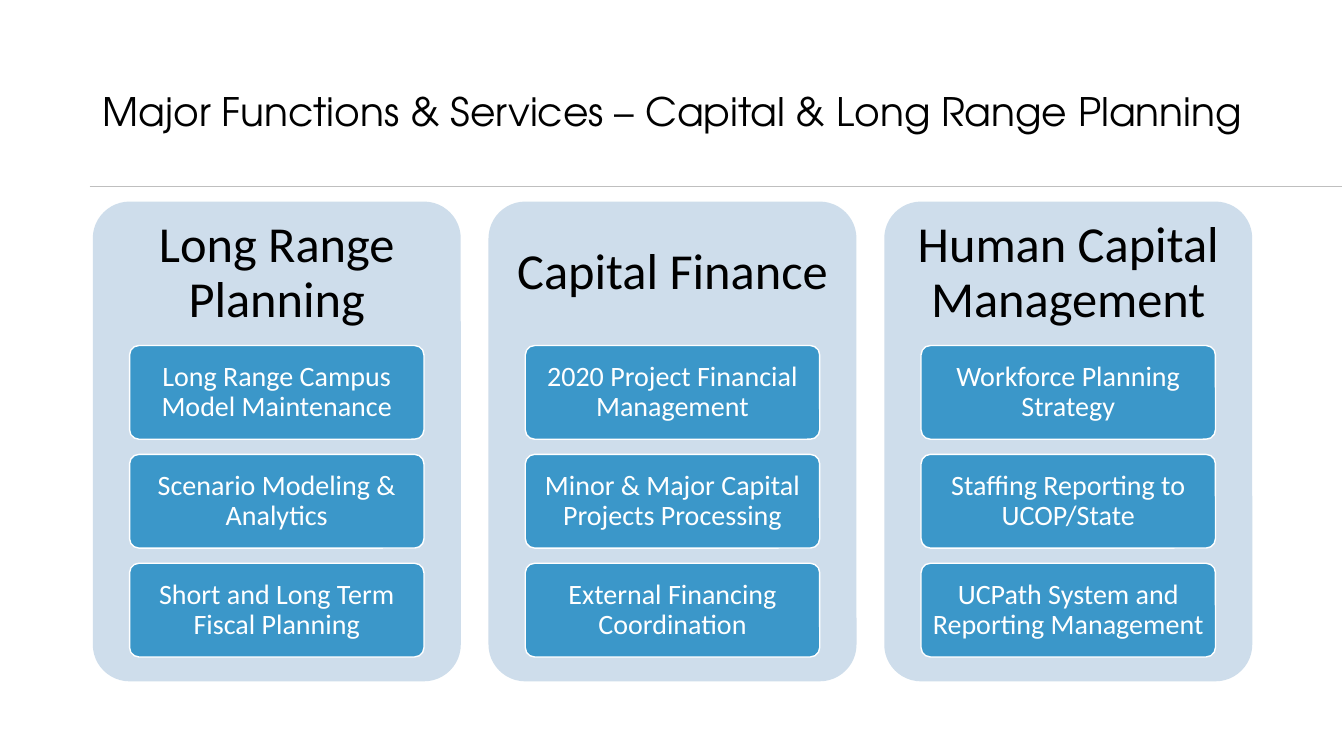
from lxml.etree import SubElement
from pptx import Presentation
from pptx.dml.color import RGBColor
from pptx.enum.shapes import MSO_CONNECTOR, MSO_SHAPE
from pptx.enum.text import MSO_ANCHOR, MSO_AUTO_SIZE, PP_ALIGN
from pptx.oxml.ns import qn
from pptx.util import Inches, Pt

COLORS = {
    "ink": "000000",
    "white": "FFFFFF",
    "rule": "BFBFBF",
    "panel": "CEDDEB",
    "tile": "3B97C9",
}

FUNCTIONS = [
    ("Long Range Planning", [
        "Long Range Campus Model Maintenance",
        "Scenario Modeling & Analytics",
        "Short and Long Term Fiscal Planning",
    ]),
    ("Capital Finance", [
        "2020 Project Financial Management",
        "Minor & Major Capital Projects Processing",
        "External Financing Coordination",
    ]),
    ("Human Capital Management", [
        "Workforce Planning Strategy",
        "Staffing Reporting to UCOP/State",
        "UCPath System and Reporting Management",
    ]),
]


def color(name):
    return RGBColor.from_string(COLORS[name])


def write(frame, text, size, font, ink, align, insets=(0.1, 0.05)):
    """Fill a text frame with one vertically centred paragraph."""
    frame.word_wrap = True
    frame.auto_size = MSO_AUTO_SIZE.NONE
    frame.vertical_anchor = MSO_ANCHOR.MIDDLE
    frame.margin_left = frame.margin_right = Inches(insets[0])
    frame.margin_top = frame.margin_bottom = Inches(insets[1])
    paragraph = frame.paragraphs[0]
    paragraph.alignment = align
    paragraph.line_spacing = 0.9
    paragraph.space_before = Pt(0)
    run = paragraph.add_run()
    run.text = text
    run.font.size = Pt(size)
    run.font.name = font
    run.font.color.rgb = color(ink)


def add_card(slide, left, top, width, height, fill):
    card = slide.shapes.add_shape(
        MSO_SHAPE.ROUNDED_RECTANGLE,
        Inches(left), Inches(top), Inches(width), Inches(height))
    card.adjustments[0] = 0.1
    card.shadow.inherit = False
    card.fill.solid()
    card.fill.fore_color.rgb = color(fill)
    card.line.fill.background()
    return card


def add_header(slide, left, top, width, height):
    # Title
    title = slide.shapes.title
    title.left, title.top = Inches(left), Inches(top)
    title.width, title.height = Inches(width), Inches(height)
    write(title.text_frame,
          "Major Functions & Services – Capital & Long Range Planning",
          28, "TeX Gyre Adventor", "ink", PP_ALIGN.LEFT)

    # Rule along the bottom of the header, running to the slide edge
    bottom = Inches(top + height)
    rule = slide.shapes.add_connector(
        MSO_CONNECTOR.STRAIGHT, Inches(left - 0.03), bottom,
        Inches(13.31), bottom)
    rule.line.color.rgb = color("rule")
    rule.line.width = Pt(0.5)
    SubElement(rule._element.spPr, qn("a:effectLst"))


def add_panel(slide, left, top, width, height, function, services):
    add_card(slide, left, top, width, height, "panel")

    # Heading in the top 30 % of the panel
    heading = slide.shapes.add_textbox(
        Inches(left), Inches(top), Inches(width), Inches(0.3 * height))
    write(heading.text_frame, function, 36, "Calibri", "ink",
          PP_ALIGN.CENTER, (0.15, 0.15))

    # Service tiles, 80 % of the panel's width
    tile_width, tile_height, pitch = 0.8 * width, 0.93, 1.08
    for row, service in enumerate(services):
        tile = add_card(slide, left + 0.1 * width,
                        top + 0.3 * height + row * pitch,
                        tile_width, tile_height, "tile")
        tile.line.color.rgb = color("white")
        tile.line.width = Pt(1)
        write(tile.text_frame, service, 20, "Calibri", "white",
              PP_ALIGN.CENTER, (0.06, 0.04))


def add_panels(slide, left, top, width, height, gap):
    count = len(FUNCTIONS)
    panel_width = (width - gap * (count - 1)) / count
    for column, (function, services) in enumerate(FUNCTIONS):
        add_panel(slide, left + column * (panel_width + gap), top,
                  panel_width, height, function, services)


def main():
    deck = Presentation()
    deck.slide_width, deck.slide_height = Inches(13.33), Inches(7.5)
    title_only = deck.slide_layouts[5]
    slide = deck.slides.add_slide(title_only)
    add_header(slide, 0.92, 0.4, 11.65, 1.45)
    add_panels(slide, 0.92, 2, 11.5, 4.76, 0.275)
    deck.save("out.pptx")


if __name__ == "__main__":
    main()
